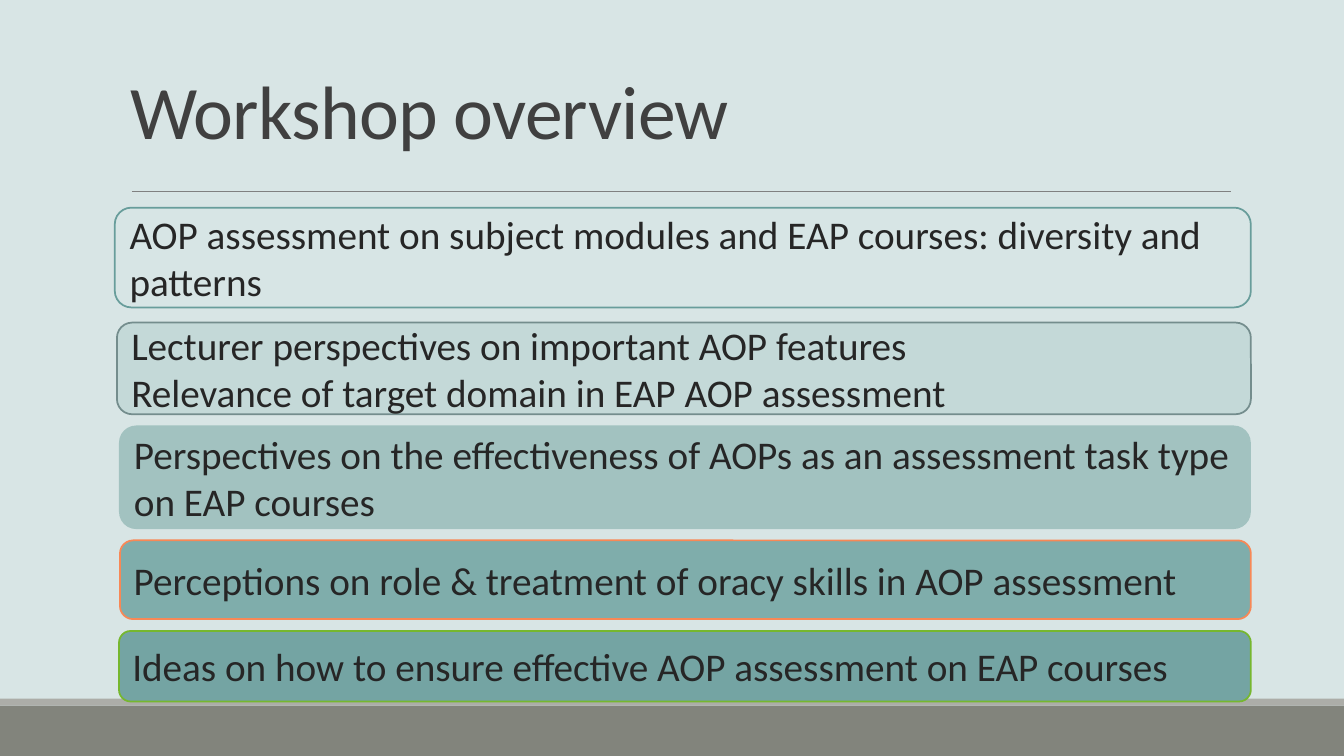
from pptx import Presentation
from pptx.dml.color import RGBColor
from pptx.enum.shapes import MSO_CONNECTOR, MSO_SHAPE
from pptx.enum.text import MSO_ANCHOR, MSO_AUTO_SIZE, PP_ALIGN
from pptx.oxml.ns import qn
from pptx.util import Pt
from lxml.etree import SubElement

# Colours
PALE = RGBColor(0xD8, 0xE5, 0xE5)
BASE = RGBColor(0x82, 0x84, 0x7C)
STRIP = RGBColor(0xAC, 0xAD, 0xA8)
RULE = RGBColor(0x80, 0x80, 0x80)
HEAD = RGBColor(0x40, 0x40, 0x40)
INK = RGBColor(0x26, 0x26, 0x26)
MIST = RGBColor(0xD7, 0xE5, 0xE5)
TEAL = RGBColor(0x68, 0x9D, 0x9B)
HAZE = RGBColor(0xC4, 0xD9, 0xD8)
SLATE = RGBColor(0x74, 0x8D, 0x8D)
SAGE = RGBColor(0xA2, 0xC2, 0xC0)
LAKE = RGBColor(0x7F, 0xAD, 0xAB)
CORAL = RGBColor(0xF8, 0x88, 0x56)
DEEP = RGBColor(0x74, 0xA4, 0xA3)
GREEN = RGBColor(0x76, 0xB7, 0x2F)

WIDE, HIGH = 960, 540
RIGHT = 893.5  # shared right edge of the topic boxes

# Left, top, height, fill, outline, lines of text
TOPICS = [
    (82, 148.3, 71.3, MIST, TEAL,
     ["AOP assessment on subject modules and EAP courses: diversity and patterns"]),
    (83.5, 230.4, 65.5, HAZE, SLATE,
     ["Lecturer perspectives on important AOP features",
      "Relevance of target domain in EAP AOP assessment"]),
    (85, 303.9, 74, SAGE, None,
     ["Perspectives on the effectiveness of AOPs as an assessment task type on EAP courses"]),
    (85.7, 386, 56.2, LAKE, CORAL,
     ["Perceptions on role & treatment of oracy skills in AOP assessment"]),
    (85, 450.7, 50.4, DEEP, GREEN,
     ["Ideas on how to ensure effective AOP assessment on EAP courses"]),
]


class Deck:
    font = "Calibri"

    def __init__(self, slide):
        self.slide = slide
        back = slide.background.fill
        back.solid()
        back.fore_color.rgb = PALE

    def style(self, para, size, color):
        para.alignment = PP_ALIGN.LEFT
        para.font.name = self.font
        para.font.size = Pt(size)
        para.font.color.rgb = color

    def shape(self, kind, left, top, width, height, fill, line=None):
        item = self.slide.shapes.add_shape(
            kind, Pt(left), Pt(top), Pt(width), Pt(height))
        item.shadow.inherit = False
        item.fill.solid()
        item.fill.fore_color.rgb = fill
        if line is None:
            item.line.fill.background()
        else:
            item.line.color.rgb = line
            item.line.width = Pt(1.25)
        return item

    def band(self, top, height, fill):
        self.shape(MSO_SHAPE.RECTANGLE, 0, top, WIDE, height, fill)

    def rule(self, left, right, top):
        line = self.slide.shapes.add_connector(
            MSO_CONNECTOR.STRAIGHT, Pt(left), Pt(top), Pt(right), Pt(top))
        line.line.color.rgb = RULE
        line.line.width = Pt(0.5)
        SubElement(line._element.spPr, qn("a:effectLst"))

    def title(self, text, left, top, width, height):
        item = self.slide.shapes.title
        item.left, item.top = Pt(left), Pt(top)
        item.width, item.height = Pt(width), Pt(height)
        frame = item.text_frame
        frame.text = text
        frame.auto_size = MSO_AUTO_SIZE.NONE
        frame.vertical_anchor = MSO_ANCHOR.BOTTOM
        para = frame.paragraphs[0]
        para.line_spacing = 0.85
        self.style(para, 54, HEAD)
        # Slightly tight letter spacing
        para.runs[0].font._element.set("spc", "-50")

    def topic(self, left, top, height, fill, line, lines):
        item = self.shape(MSO_SHAPE.ROUNDED_RECTANGLE, left, top,
                          RIGHT - left, height, fill, line)
        frame = item.text_frame
        frame.word_wrap = True
        frame.vertical_anchor = MSO_ANCHOR.MIDDLE
        frame.text = "\n".join(lines)
        for para in frame.paragraphs:
            self.style(para, 28, INK)


def main():
    show = Presentation()
    show.slide_width, show.slide_height = Pt(WIDE), Pt(HIGH)
    deck = Deck(show.slides.add_slide(show.slide_layouts[5]))

    # Footer bands and title rule
    deck.band(504, 36, BASE)
    deck.band(499, 5, STRIP)
    deck.rule(94.3, 879, 136.8)

    # Title and topics
    deck.title("Workshop overview", 85.7, 0, 792, 114.5)
    for topic in TOPICS:
        deck.topic(*topic)

    show.save("out.pptx")


if __name__ == "__main__":
    main()
